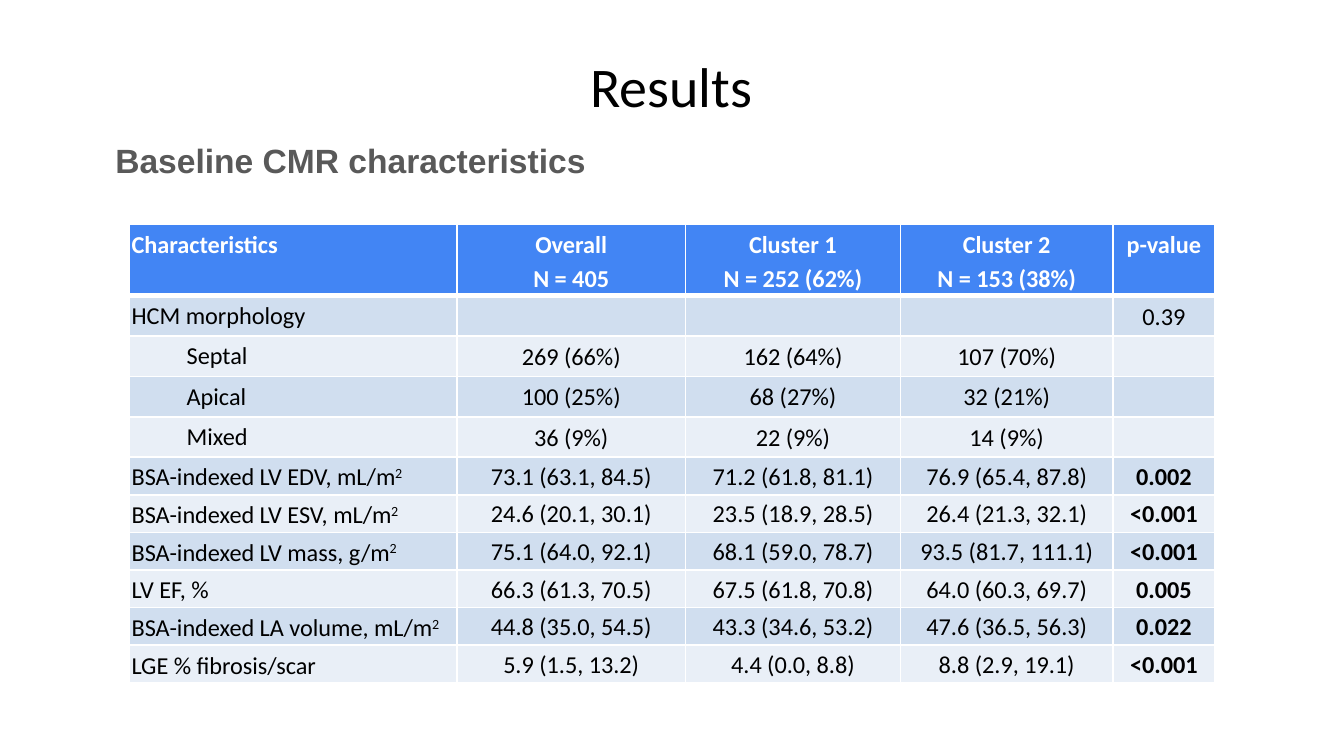
from dataclasses import dataclass

from lxml.etree import SubElement
from pptx import Presentation
from pptx.dml.color import RGBColor
from pptx.enum.text import MSO_ANCHOR, PP_ALIGN
from pptx.oxml.ns import qn
from pptx.util import Inches, Pt

BLACK = RGBColor(0x00, 0x00, 0x00)
WHITE = RGBColor(0xFF, 0xFF, 0xFF)
GREY = RGBColor(0x59, 0x59, 0x59)
HEADER_BLUE = RGBColor(0x42, 0x85, 0xF4)
BAND_DARK = RGBColor(0xD0, 0xDE, 0xEF)
BAND_LIGHT = RGBColor(0xE9, 0xEF, 0xF7)

SLIDE_WIDTH = 10
COLUMN_WIDTHS = (2.44, 1.7, 1.6, 1.58, 0.76)
HEADER_HEIGHT, MORPHOLOGY_HEIGHT, MEASURE_HEIGHT = 0.53, 0.3, 0.28
LABEL_MARGINS = (0.02, 0.01, 0.02, 0.01)
VALUE_MARGINS = (0, 0, 0, 0.02)
SIGNIFICANCE_LEVEL = 0.05

HEADERS = ("Characteristics", "Overall\nN = 405", "Cluster 1\nN = 252 (62%)",
           "Cluster 2\nN = 153 (38%)", "p-value")


@dataclass
class Characteristic:
    label: str
    overall: str = ""
    cluster_1: str = ""
    cluster_2: str = ""
    p_value: str = ""
    superscript: str = ""
    indent: float = 0
    height: float = MEASURE_HEIGHT


@dataclass
class Morphology(Characteristic):
    indent: float = 0.41
    height: float = MORPHOLOGY_HEIGHT


CHARACTERISTICS = (
    Morphology("HCM morphology", p_value="0.39", indent=0),
    Morphology("Septal", "269 (66%)", "162 (64%)", "107 (70%)"),
    Morphology("Apical", "100 (25%)", "68 (27%)", "32 (21%)"),
    Morphology("Mixed", "36 (9%)", "22 (9%)", "14 (9%)"),
    Characteristic("BSA-indexed LV EDV, mL/m", "73.1 (63.1, 84.5)", "71.2 (61.8, 81.1)",
                   "76.9 (65.4, 87.8)", "0.002", "2"),
    Characteristic("BSA-indexed LV ESV, mL/m", "24.6 (20.1, 30.1)", "23.5 (18.9, 28.5)",
                   "26.4 (21.3, 32.1)", "<0.001", "2"),
    Characteristic("BSA-indexed LV mass, g/m", "75.1 (64.0, 92.1)", "68.1 (59.0, 78.7)",
                   "93.5 (81.7, 111.1)", "<0.001", "2"),
    Characteristic("LV EF, %", "66.3 (61.3, 70.5)", "67.5 (61.8, 70.8)",
                   "64.0 (60.3, 69.7)", "0.005"),
    Characteristic("BSA-indexed LA volume, mL/m", "44.8 (35.0, 54.5)", "43.3 (34.6, 53.2)",
                   "47.6 (36.5, 56.3)", "0.022", "2"),
    Characteristic("LGE % fibrosis/scar", "5.9 (1.5, 13.2)", "4.4 (0.0, 8.8)",
                   "8.8 (2.9, 19.1)", "<0.001"),
)


def style_paragraph(para, name: str, size: float, color: RGBColor, bold: bool = False) -> None:
    para.font.name = name
    para.font.size = Pt(size)
    para.font.color.rgb = color
    para.font.bold = bold


def add_heading(slide, text: str, left: float, top: float, width: float, height: float):
    """Add a one-line text box and return its frame."""
    box = slide.shapes.add_textbox(Inches(left), Inches(top), Inches(width), Inches(height))
    frame = box.text_frame
    frame.word_wrap = True
    frame.text = text
    return frame


def style_cell(cell, fill: RGBColor, margins: tuple, top: float = 1, bottom: float = 1) -> None:
    """Set margins, white borders (widths in points) and fill."""
    cell.margin_left, cell.margin_top, cell.margin_right, cell.margin_bottom = map(Inches, margins)
    properties = cell._tc.get_or_add_tcPr()
    for side, width in (("L", 1), ("R", 1), ("T", top), ("B", bottom)):
        line = SubElement(properties, qn(f"a:ln{side}"), w=str(Pt(width)))
        SubElement(SubElement(line, qn("a:solidFill")), qn("a:srgbClr"), val=str(WHITE))
    cell.fill.solid()
    cell.fill.fore_color.rgb = fill


def write_cell(cell, text: str, color: RGBColor, bold: bool, centered: bool) -> None:
    cell.text_frame.text = text
    for para in cell.text_frame.paragraphs:
        para.alignment = PP_ALIGN.CENTER if centered else PP_ALIGN.LEFT
        para.line_spacing = 1.15
        style_paragraph(para, "Calibri", 13, color, bold)


def fill_label(cell, item: Characteristic) -> None:
    write_cell(cell, item.label, BLACK, bold=False, centered=False)
    para = cell.text_frame.paragraphs[0]
    if item.indent:
        para._p.get_or_add_pPr().set("marL", str(Inches(item.indent)))
    if item.superscript:
        span = para.add_run()
        span.text = item.superscript
        span._r.get_or_add_rPr().set("baseline", "30000")


def add_characteristics_table(slide) -> None:
    heights = [HEADER_HEIGHT] + [item.height for item in CHARACTERISTICS]
    frame = slide.shapes.add_table(len(heights), len(HEADERS), Inches(0.96), Inches(1.67),
                                   Inches(sum(COLUMN_WIDTHS)), Inches(sum(heights)))
    table = frame.table
    table.first_row = table.horz_banding = False
    for column, width in zip(table.columns, COLUMN_WIDTHS):
        column.width = Inches(width)
    for row, height in zip(table.rows, heights):
        row.height = Inches(height)

    for column, header in enumerate(HEADERS):
        cell = table.cell(0, column)
        style_cell(cell, HEADER_BLUE, LABEL_MARGINS, bottom=3)
        write_cell(cell, header, WHITE, bold=True, centered=column > 0)

    for row, item in enumerate(CHARACTERISTICS, start=1):
        band = BAND_DARK if row % 2 else BAND_LIGHT
        top = 3 if row == 1 else 1
        style_cell(table.cell(row, 0), band, LABEL_MARGINS, top)
        fill_label(table.cell(row, 0), item)
        values = (item.overall, item.cluster_1, item.cluster_2, item.p_value)
        for column, value in enumerate(values, start=1):
            cell = table.cell(row, column)
            style_cell(cell, band, VALUE_MARGINS if value else (0, 0, 0, 0), top)
            if value:
                cell.vertical_anchor = MSO_ANCHOR.MIDDLE
                significant = (value == item.p_value
                               and float(value.lstrip("<")) < SIGNIFICANCE_LEVEL)
                write_cell(cell, value, BLACK, bold=significant, centered=True)


def main() -> None:
    deck = Presentation()
    deck.slide_width = Inches(SLIDE_WIDTH)
    deck.slide_height = Inches(SLIDE_WIDTH * 9 / 16)
    page = deck.slides.add_slide(deck.slide_layouts[6])

    title = add_heading(page, "Results", 0.07, 0.34, 9.85, 0.65)
    title.vertical_anchor = MSO_ANCHOR.MIDDLE
    title.paragraphs[0].alignment = PP_ALIGN.CENTER
    title.paragraphs[0].line_spacing = 0.9
    style_paragraph(title.paragraphs[0], "Calibri", 30, BLACK)

    subtitle = add_heading(page, "Baseline CMR characteristics", 0.76, 0.99, 8.34, 0.44)
    style_paragraph(subtitle.paragraphs[0], "Arial", 18, GREY, bold=True)

    add_characteristics_table(page)
    deck.save("out.pptx")


if __name__ == "__main__":
    main()
